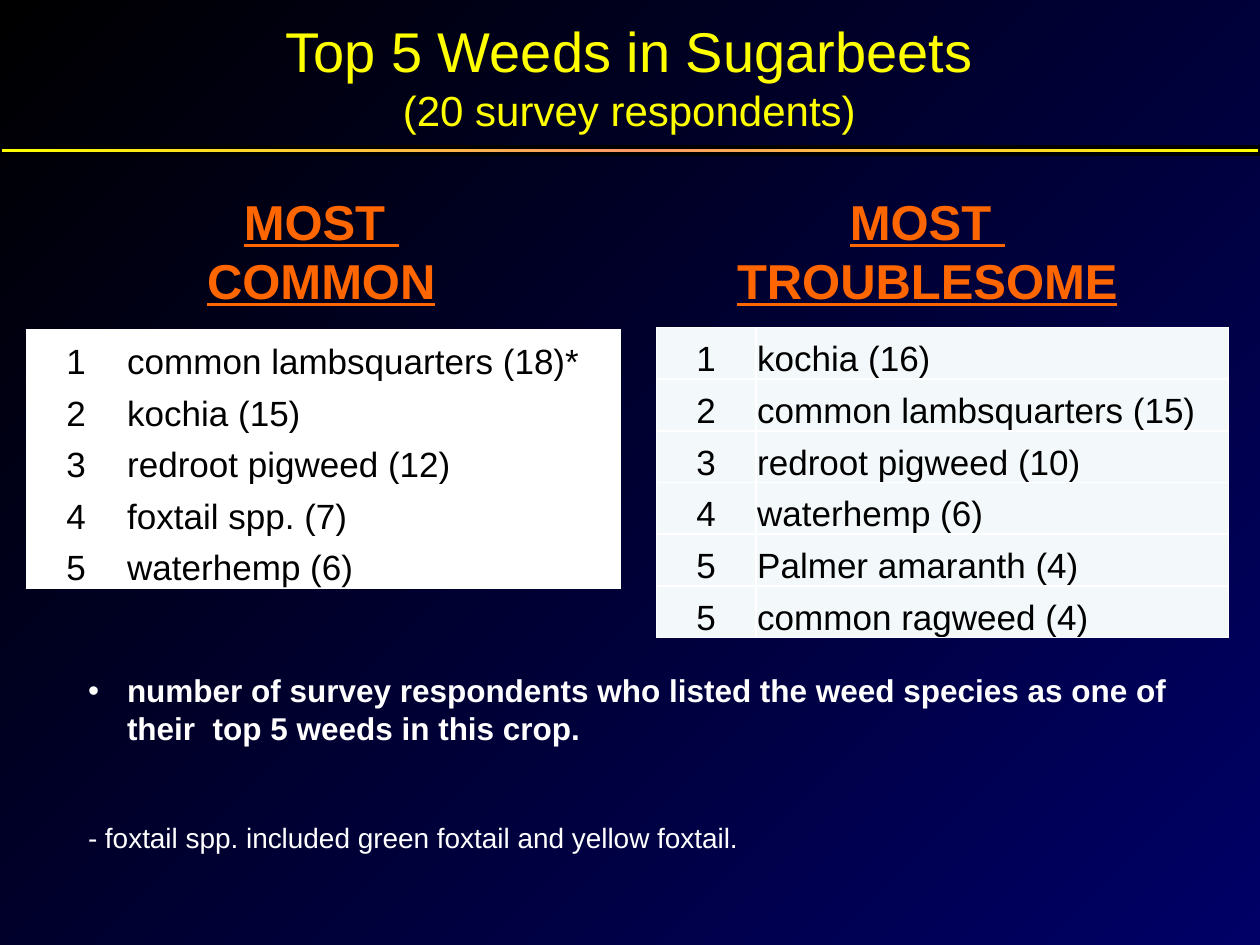
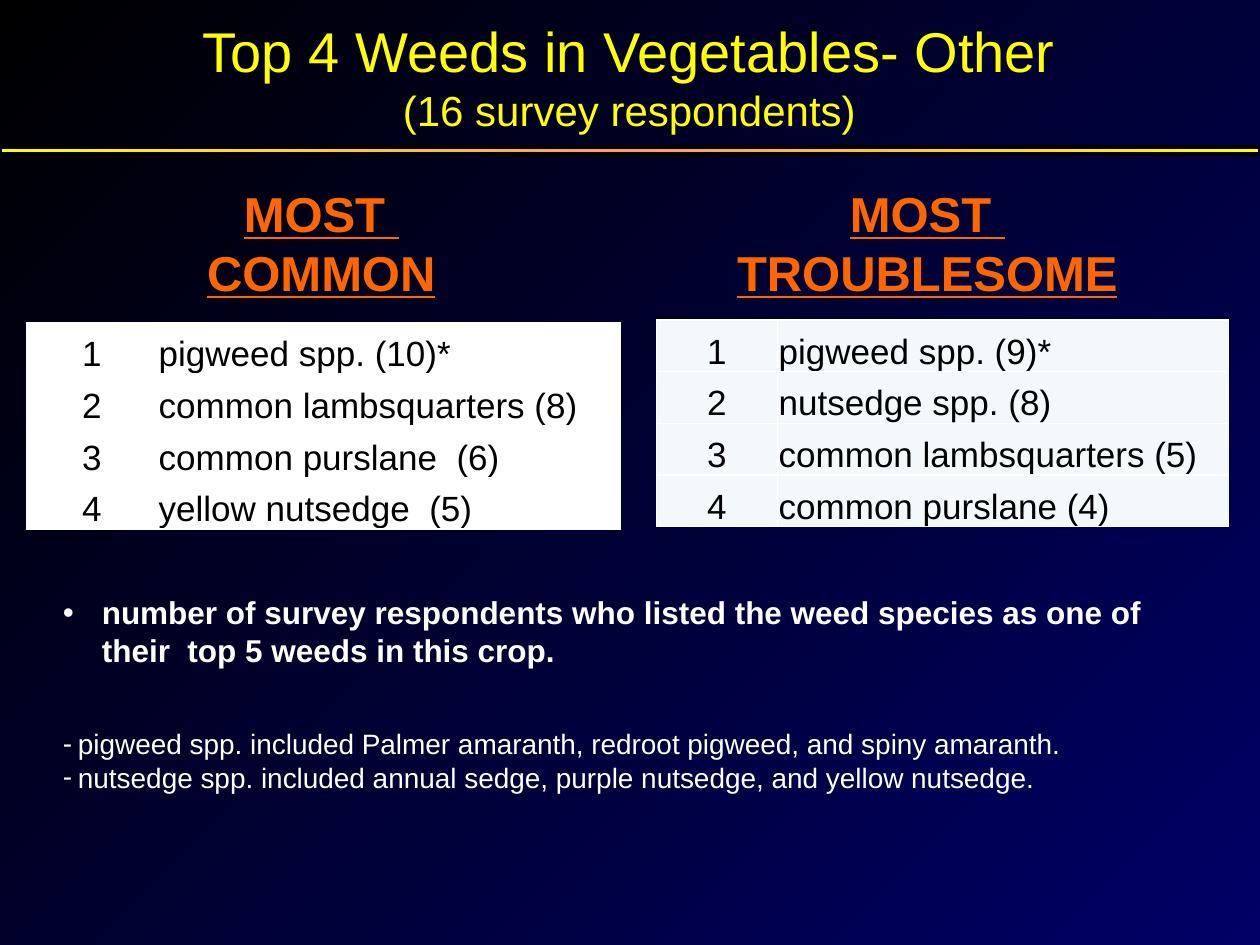
from copy import deepcopy
from dataclasses import dataclass

from lxml.etree import SubElement
from pptx import Presentation
from pptx.dml.color import RGBColor
from pptx.enum.shapes import MSO_SHAPE
from pptx.enum.text import MSO_ANCHOR, PP_ALIGN
from pptx.oxml.ns import qn
from pptx.util import Inches, Pt


@dataclass(frozen=True)
class Theme:
    font: str = "Arial"
    backdrop: tuple = ("000000", "000066")
    band: tuple = ("FFFF00", "FF9966", "FFFF00")
    band_edge: str = "000000"
    title: str = "FFFF00"
    heading: str = "FF6600"
    ranking: str = "000000"
    grid: str = "FFFFFF"
    note: str = "FFFFFF"
    title_size: int = 32
    subtitle_size: int = 24
    heading_size: int = 28
    ranking_size: int = 20
    key_size: int = 18
    note_size: int = 16


THEME = Theme()
KEY = ("number of survey respondents who listed the weed species "
       "as one of their  top 5 weeds in this crop.")
COLUMNS = [
    {"heading": ["MOST ", "COMMON"], "heading_left": 1.35, "heading_width": 2.4,
     "left": 0.21, "width": 4.71, "drop": 0, "fill": "FFFFFF"},
    {"heading": ["MOST ", "TROUBLESOME"], "heading_left": 5.73, "heading_width": 3.26,
     "left": 5.21, "width": 4.54, "drop": -0.02, "fill": "F3F9FA"},
]
HEADING_RISE = 1.15
ROW_HEIGHT = 0.41

SURVEYS = [
    {
        "title": ["Top 5 Weeds in Sugarbeets", "(20 survey respondents)"],
        "ranking_top": 2.62,
        "rank_widths": [0.79, 0.79],
        "rankings": [
            [(1, "common lambsquarters (18)*"), (2, "kochia (15)"),
             (3, "redroot pigweed (12)"), (4, "foxtail spp. (7)"),
             (5, "waterhemp (6)")],
            [(1, "kochia (16)"), (2, "common lambsquarters (15)"),
             (3, "redroot pigweed (10)"), (4, "waterhemp (6)"),
             (5, "Palmer amaranth (4)"), (5, "common ragweed (4)")],
        ],
        "notes_box": (0.6, 5.28, 8.99, 1.85),
        "notes": ["- foxtail spp. included green foxtail and yellow foxtail."],
        "note_bullet": None,
        "note_gap": 42,
    },
    {
        "title": ["Top 4 Weeds in Vegetables- Other", "(16 survey respondents)"],
        "ranking_top": 2.56,
        "rank_widths": [1.04, 0.96],
        "rankings": [
            [(1, "pigweed spp. (10)*"), (2, "common lambsquarters (8)"),
             (3, "common purslane  (6)"), (4, "yellow nutsedge  (5)")],
            [(1, "pigweed spp. (9)*"), (2, "nutsedge spp. (8)"),
             (3, "common lambsquarters (5)"), (4, "common purslane (4)")],
        ],
        "notes_box": (0.4, 4.66, 9.25, 1.72),
        "notes": [
            "pigweed spp. included Palmer amaranth, redroot pigweed, and spiny amaranth.",
            "nutsedge spp. included annual sedge, purple nutsedge, and yellow nutsedge.",
        ],
        "note_bullet": "-",
        "note_gap": 33,
    },
]


def rgb(color):
    return RGBColor.from_string(color)


def style(paragraph, size, color, bold=False, underline=False, align=PP_ALIGN.LEFT):
    paragraph.alignment = align
    for run in paragraph.runs:
        font = run.font
        font.name, font.size, font.bold, font.underline = THEME.font, Pt(size), bold, underline
        font.color.rgb = rgb(color)


def indent(paragraph, hang, bullet):
    properties = paragraph._p.get_or_add_pPr()
    properties.set("marL", str(Inches(hang)))
    properties.set("indent", str(-Inches(hang)))
    if bullet:
        SubElement(properties, qn("a:buFont"), typeface=THEME.font)
        SubElement(properties, qn("a:buChar"), char=bullet)
    else:
        SubElement(properties, qn("a:buNone"))


def blend(fill, owner, colors, angle):
    fill.gradient()
    fill.gradient_angle = (360 - angle) % 360
    stops = owner.find(".//" + qn("a:gsLst"))
    for _ in colors[2:]:
        stops.insert(1, deepcopy(stops[0]))
    for index, (stop, color) in enumerate(zip(fill.gradient_stops, colors)):
        stop.position = index / (len(colors) - 1)
        stop.color.rgb = rgb(color)


def add_text(slide, box, lines, wrap=True):
    frame = slide.shapes.add_textbox(*map(Inches, box)).text_frame
    frame.word_wrap = wrap
    frame.text = "\n".join(lines)
    return frame


def add_title(slide, lines):
    frame = add_text(slide, (0.33, 0, 9.33, 1.2), lines)
    frame.vertical_anchor = MSO_ANCHOR.MIDDLE
    for paragraph, size in zip(frame.paragraphs, (THEME.title_size, THEME.subtitle_size)):
        style(paragraph, size, THEME.title, align=PP_ALIGN.CENTER)


def add_band(slide):
    band = slide.shapes.add_shape(
        MSO_SHAPE.RECTANGLE, 0, Inches(1.17), Inches(10), Inches(0.05))
    band.shadow.inherit = False
    blend(band.fill, band._element.spPr, THEME.band, 0)
    band.line.color.rgb = rgb(THEME.band_edge)
    band.line.width = Pt(2.25)


def add_heading(slide, column, top):
    box = (column["heading_left"], top, column["heading_width"], 1.04)
    for paragraph in add_text(slide, box, column["heading"], wrap=False).paragraphs:
        style(paragraph, THEME.heading_size, THEME.heading, True, True, PP_ALIGN.CENTER)


def outline(cell):
    properties = cell._tc.get_or_add_tcPr()
    for index, side in enumerate(("lnL", "lnR", "lnT", "lnB")):
        edge = properties.makeelement(qn("a:" + side), {"w": str(Pt(1))})
        fill = SubElement(edge, qn("a:solidFill"))
        SubElement(fill, qn("a:srgbClr"), val=THEME.grid)
        properties.insert(index, edge)


def add_ranking(slide, column, top, rank_width, ranking):
    table = slide.shapes.add_table(
        len(ranking), 2, Inches(column["left"]), Inches(top + column["drop"]),
        Inches(column["width"]), Inches(ROW_HEIGHT * len(ranking))).table
    table.first_row = table.horz_banding = False
    table.columns[0].width = Inches(rank_width)
    table.columns[1].width = Inches(column["width"] - rank_width)
    for row, entry in zip(table.rows, ranking):
        row.height = Inches(ROW_HEIGHT)
        for cell, value, align in zip(row.cells, entry, (PP_ALIGN.CENTER, PP_ALIGN.LEFT)):
            cell.text_frame.text = str(value)
            cell.margin_left = cell.margin_right = cell.margin_top = Inches(0.01)
            cell.margin_bottom = 0
            cell.vertical_anchor = MSO_ANCHOR.BOTTOM
            cell.fill.solid()
            cell.fill.fore_color.rgb = rgb(column["fill"])
            outline(cell)
            style(cell.text_frame.paragraphs[0], THEME.ranking_size, THEME.ranking, align=align)


def add_notes(slide, survey):
    frame = add_text(slide, survey["notes_box"], [KEY, *survey["notes"]])
    key, *notes = frame.paragraphs
    style(key, THEME.key_size, THEME.note, bold=True)
    indent(key, 0.31, "•")
    notes[0].space_before = Pt(survey["note_gap"])
    for note in notes:
        style(note, THEME.note_size, THEME.note)
        indent(note, 0.12, survey["note_bullet"])


def add_survey(deck, survey):
    slide = deck.slides.add_slide(deck.slide_layouts[6])
    blend(slide.background.fill, slide._element, THEME.backdrop, 45)
    top = survey["ranking_top"]
    for column, rank_width, ranking in zip(COLUMNS, survey["rank_widths"], survey["rankings"]):
        add_heading(slide, column, top - HEADING_RISE)
        add_ranking(slide, column, top, rank_width, ranking)
    add_title(slide, survey["title"])
    add_notes(slide, survey)
    add_band(slide)


def main():
    deck = Presentation()
    deck.slide_width, deck.slide_height = Inches(10), Inches(7.5)
    for survey in SURVEYS:
        add_survey(deck, survey)
    deck.save("out.pptx")


if __name__ == "__main__":
    main()
